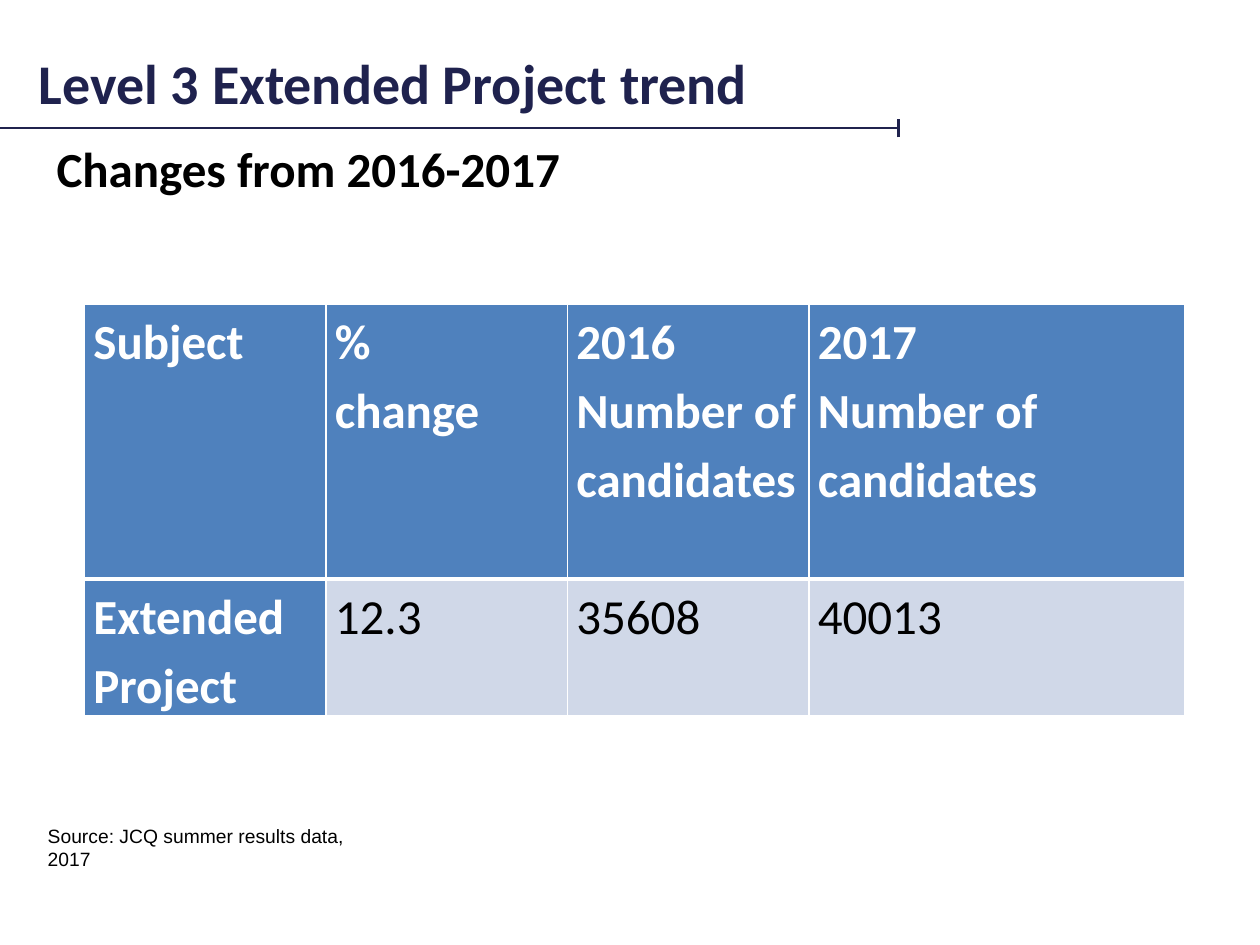
from pptx import Presentation
from pptx.dml.color import RGBColor
from pptx.enum.shapes import MSO_CONNECTOR, MSO_SHAPE
from pptx.enum.text import MSO_ANCHOR, MSO_AUTO_SIZE
from pptx.oxml.ns import qn
from pptx.util import Pt
from lxml import etree

LINE = MSO_CONNECTOR.STRAIGHT
RECT = MSO_SHAPE.RECTANGLE
TOP = MSO_ANCHOR.TOP
MIDDLE = MSO_ANCHOR.MIDDLE
GROW = MSO_AUTO_SIZE.SHAPE_TO_FIT_TEXT

NAVY = RGBColor(0x20, 0x23, 0x4E)
TITLE = RGBColor(0x1F, 0x22, 0x4E)
BLUE = RGBColor(0x4F, 0x81, 0xBD)
PALE = RGBColor(0xD0, 0xD8, 0xE8)
WHITE = RGBColor(0xFF, 0xFF, 0xFF)
BLACK = RGBColor(0, 0, 0)


def write(frame, text, size=28, font="Calibri", color=BLACK, bold=False,
          space=None):
    """Fill a text frame, one paragraph for each line of text."""
    frame.word_wrap = True
    for i, line in enumerate(text.split("\n")):
        para = frame.add_paragraph() if i else frame.paragraphs[0]
        para.line_spacing = space
        run = para.add_run()
        run.text = line
        run.font.size = Pt(size)
        run.font.name = font
        run.font.bold = bold
        run.font.color.rgb = color


def edge(cell, sides):
    """Draw white cell borders; sides maps a tag to a width in points."""
    props = cell._tc.get_or_add_tcPr()
    for i, (tag, width) in enumerate(sides.items()):
        ln = etree.Element(qn("a:" + tag), w=str(Pt(width)))
        fill = etree.SubElement(ln, qn("a:solidFill"))
        etree.SubElement(fill, qn("a:srgbClr"), val=str(WHITE))
        props.insert(i, ln)


prs = Presentation()
prs.slide_width, prs.slide_height = Pt(720), Pt(540)
slide = prs.slides.add_slide(prs.slide_layouts[6])
shapes = slide.shapes

# Footer band
band = shapes.add_shape(RECT, Pt(0), Pt(483), Pt(720), Pt(57))
band.shadow.inherit = False
band.fill.solid()
band.fill.fore_color.rgb = WHITE
band.line.color.rgb = WHITE
band.line.width = Pt(0.25)

# Title rule with its end tick
for x1, y1, x2, y2 in [(0, 73.3, 513.4, 73.3), (513.4, 78.5, 513.4, 67.9)]:
    rule = shapes.add_connector(LINE, Pt(x1), Pt(y1), Pt(x2), Pt(y2))
    rule.line.color.rgb = NAVY
    rule.line.width = Pt(1.25)
    etree.SubElement(rule._element.spPr, qn("a:effectLst"))

# Title, subtitle and source
texts = [
    ((15.1, 20, 688.3, 54), MIDDLE, "Level 3 Extended Project trend",
     dict(size=32, color=TITLE, bold=True)),
    ((25.2, 75.6, 385.2, 63.4), TOP, "Changes from 2016-2017",
     dict(bold=True)),
    ((20.2, 473.8, 208, 21), MIDDLE, "Source: JCQ summer results data, 2017",
     dict(size=11, font="Arial")),
]
for place, anchor, text, style in texts:
    box = shapes.add_textbox(*map(Pt, place))
    box.text_frame.vertical_anchor = anchor
    write(box.text_frame, text, **style)
box.text_frame.auto_size = GROW

# Results table
rows = [
    ["Subject", "%\nchange", "2016\nNumber of\ncandidates",
     "2017\nNumber of\ncandidates"],
    ["Extended Project", "12.3", "35608", "40013"],
]
widths = [138, 138, 138, 214.6]
heights = [157, 78]
table = shapes.add_table(2, 4, Pt(48.4), Pt(173.8), Pt(sum(widths)),
                         Pt(sum(heights))).table
for col, width in zip(table.columns, widths):
    col.width = Pt(width)
for r, row in enumerate(rows):
    table.rows[r].height = Pt(heights[r])
    for c, text in enumerate(row):
        cell = table.cell(r, c)
        head = r == 0 or c == 0
        cell.margin_left = cell.margin_right = Pt(5)
        cell.margin_top = cell.margin_bottom = Pt(0)
        cell.fill.solid()
        cell.fill.fore_color.rgb = BLUE if head else PALE
        edge(cell, {"lnL": 1, "lnR": 1, "lnT": 3 if r else 1,
                    "lnB": 1 if r else 3})
        write(cell.text_frame, text, color=WHITE if head else BLACK,
              bold=head, space=1.15)

prs.save("out.pptx")
